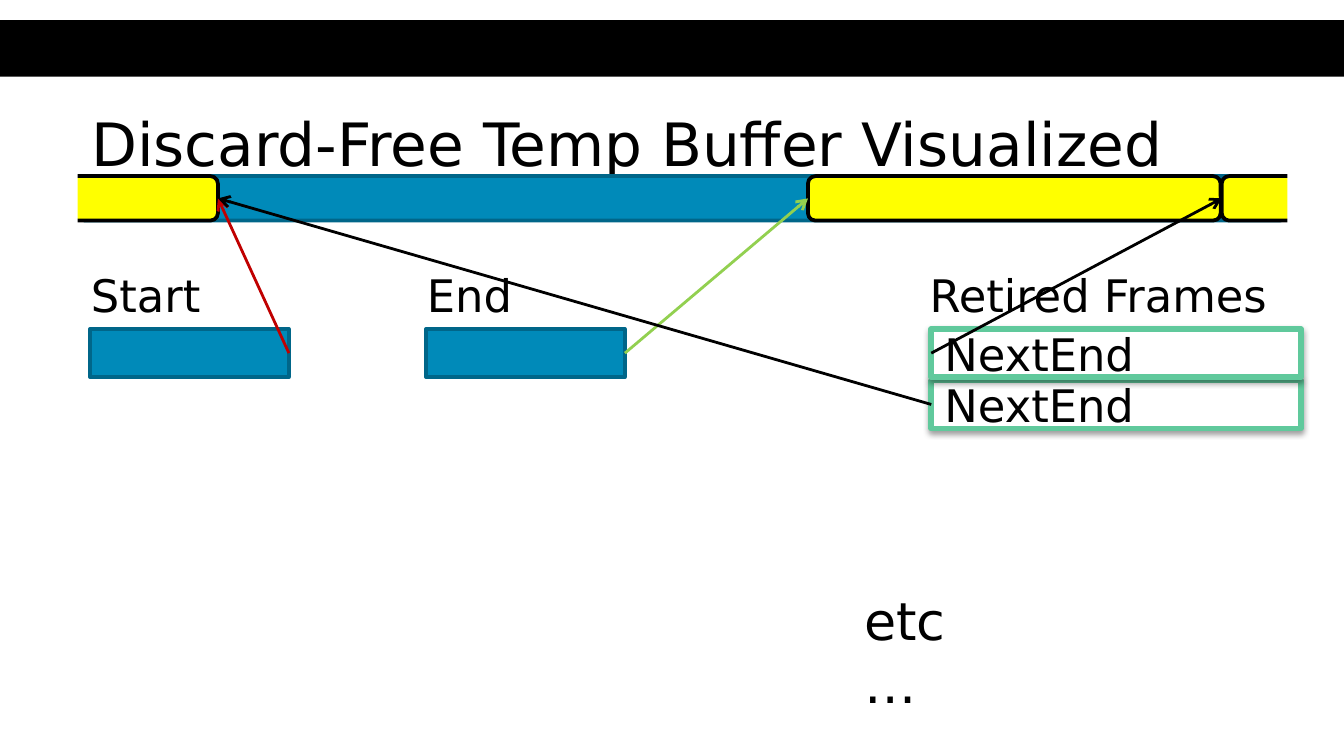
from lxml import etree
from pptx import Presentation
from pptx.dml.color import RGBColor
from pptx.enum.shapes import MSO_CONNECTOR, MSO_SHAPE
from pptx.enum.text import MSO_ANCHOR, PP_ALIGN
from pptx.oxml import parse_xml
from pptx.oxml.ns import nsdecls, qn
from pptx.util import Cm, Pt

RECT = MSO_SHAPE.RECTANGLE
ROUND = MSO_SHAPE.ROUNDED_RECTANGLE
LINE = MSO_CONNECTOR.STRAIGHT
MIDDLE = MSO_ANCHOR.MIDDLE
LEFT = PP_ALIGN.LEFT

HUES = {
    "ink": "000000", "paper": "FFFFFF", "blue": "008AB9", "navy": "006689",
    "yellow": "FFFF00", "mint": "60C99C", "red": "C00000", "green": "92D050",
}
FONT = "DejaVu Sans"
SHADOW = (
    f'<a:effectLst {nsdecls("a")}><a:outerShdw blurRad="39370" dist="20320" '
    'dir="5400000" rotWithShape="0"><a:srgbClr val="000000">'
    '<a:alpha val="38000"/></a:srgbClr></a:outerShdw></a:effectLst>'
)


def hue(name):
    return RGBColor.from_string(HUES[name])


class Board:
    """Holds the slide and the text style shared by its parts."""

    def __init__(self, slide):
        self.shapes = slide.shapes
        self.style = {"name": FONT, "bold": False}

    def words(self, shape, text, size, wrap=True, **frame):
        body = shape.text_frame
        for key, value in {"word_wrap": wrap, **frame}.items():
            setattr(body, key, value)
        para = body.paragraphs[0]
        para.alignment = LEFT
        run = para.add_run()
        run.text = text
        for key, value in {**self.style, "size": Pt(size)}.items():
            setattr(run.font, key, value)
        run.font.color.rgb = hue("ink")

    def title(self, text, *place):
        shape = self.shapes.title
        for key, value in zip(("left", "top", "width", "height"), place):
            setattr(shape, key, Cm(value))
        self.words(shape, text, 32, vertical_anchor=MIDDLE)

    def label(self, text, *place, size=24, wrap=False):
        shape = self.shapes.add_textbox(*map(Cm, place))
        self.words(shape, text, size, wrap)

    def block(self, kind, place, fill, edge=None, width=2):
        shape = self.shapes.add_shape(kind, *map(Cm, place))
        shape.shadow.inherit = False
        shape.fill.solid()
        shape.fill.fore_color.rgb = hue(fill)
        if edge:
            shape.line.color.rgb = hue(edge)
            shape.line.width = Pt(width)
        else:
            shape.line.fill.background()
        return shape

    def frame(self, text, *place):
        """Draw a retired frame: a shadowed box with its text."""
        shape = self.block(RECT, place, "paper", "mint", 3)
        props = shape.element.spPr
        props.replace(props.find(qn("a:effectLst")), parse_xml(SHADOW))
        self.words(shape, text, 24, vertical_anchor=MIDDLE)

    def arrow(self, start, end, color):
        link = self.shapes.add_connector(LINE, *map(Cm, start + end))
        link.line.color.rgb = hue(color)
        link.line.width = Pt(1.5)
        props = link.element.spPr
        etree.SubElement(props.find(qn("a:ln")), qn("a:tailEnd"), type="arrow")
        etree.SubElement(props, qn("a:effectLst"))


def main():
    deck = Presentation()
    deck.slide_width, deck.slide_height = Cm(25.4), Cm(14.29)
    board = Board(deck.slides.add_slide(deck.slide_layouts[5]))

    board.block(RECT, (0, 0.38, 25.4, 1.07), "ink")
    board.title("Discard-Free Temp Buffer Visualized", 1.47, 1.85, 22.43, 1.7)

    # Ring buffer, with its used spans in yellow
    top, tall = 3.33, 0.84
    mid = top + tall / 2
    head, tail, seam = 4.12, 15.27, 23.09
    board.block(ROUND, (1.47, top, 22.86, tall), "blue", "navy")
    for left, wide in ((head - 5.28, 5.28), (tail, 7.8), (seam, 5.28)):
        board.block(ROUND, (left, top, wide, tall), "yellow", "ink")

    # Pointers
    row, wide, high = 6.22, 3.76, 0.91
    for text, left, span in (("Start", 1.47, 2.95), ("End", 7.82, 2.13)):
        board.label(text, left, 4.94, span, 1.27)
        board.block(RECT, (left + 0.23, row, wide, high), "blue", "navy")

    # Retired frames
    side, step = 17.6, 0.97
    board.label("Retired Frames", 17.32, 4.93, 7.01, 1.27)
    for i in (1, 0):
        board.frame("NextEnd", side, row + i * step, 6.99, high)
    board.label("etc…", 16.08, 11, 2.84, 1.45, size=28, wrap=True)

    line = row + high / 2
    for start, goal, color in (
        ((1.7 + wide, line), head, "red"),
        ((side, line), seam, "ink"),
        ((8.05 + wide, line), tail, "green"),
        ((side, line + step), head, "ink"),
    ):
        board.arrow(start, (goal, mid), color)

    # Masks that cut the buffer off at both ends
    for left, upper, span in ((24.33, 3.12, 1.07), (0, 3.02, 1.47)):
        board.block(RECT, (left, upper, span, 1.47), "paper")

    deck.save("out.pptx")


if __name__ == "__main__":
    main()
